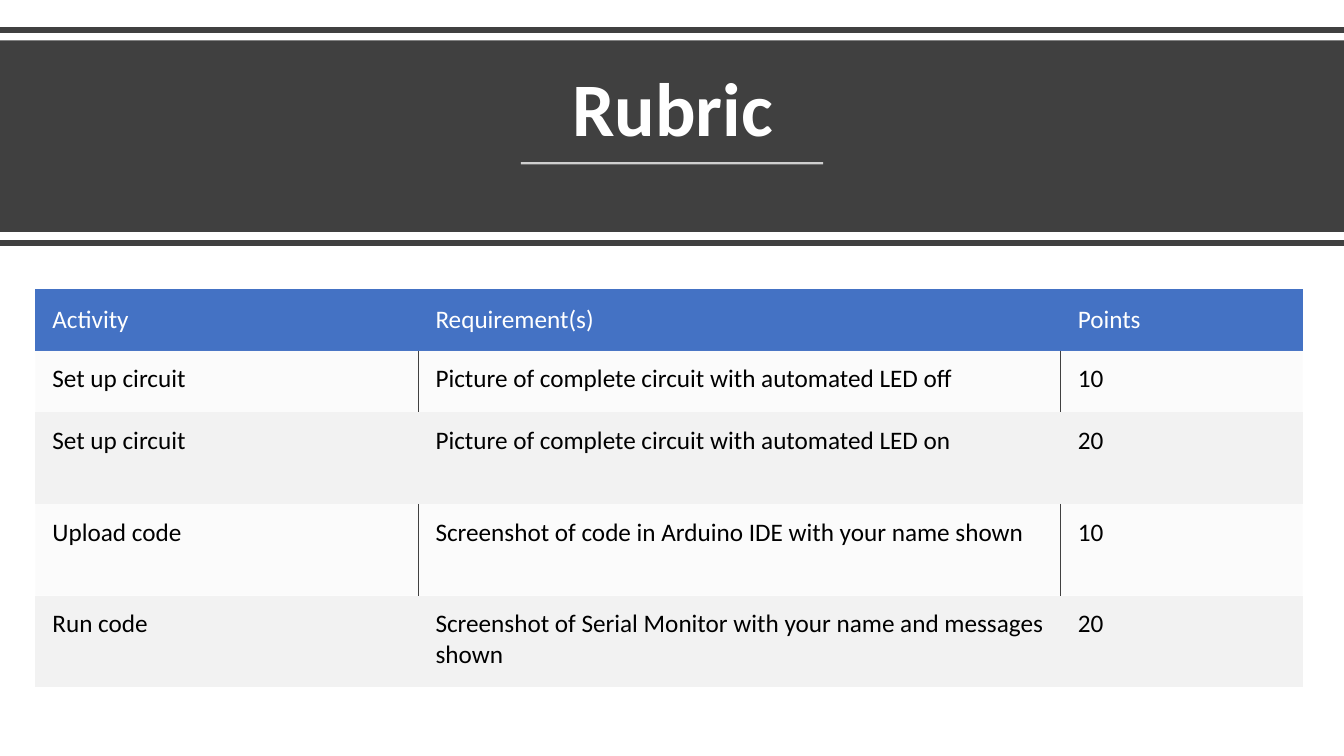
from dataclasses import dataclass

from lxml import etree
from pptx import Presentation
from pptx import util as u
from pptx.dml.color import RGBColor
from pptx.enum import shapes, text
from pptx.oxml.ns import qn

# Content
TITLE = "Rubric"
RUBRIC = [
    ("Activity", "Requirement(s)", "Points"),
    ("Set up circuit", "Picture of complete circuit with automated LED off", "10"),
    ("Set up circuit", "Picture of complete circuit with automated LED on", "20"),
    ("Upload code", "Screenshot of code in Arduino IDE with your name shown", "10"),
    ("Run code", "Screenshot of Serial Monitor with your name and messages shown", "20"),
]


@dataclass(frozen=True)
class Theme:
    font: str = "Calibri"
    dark: str = "404040"
    accent: str = "4472C4"
    band: str = "F2F2F2"
    white: str = "FFFFFF"
    black: str = "000000"
    title_size: float = 54
    body_size: float = 18
    rule: float = 4
    underline: float = 1.5
    divider: float = 0.5


THEME = Theme()

# Layout in inches
WIDTH, HEIGHT = 13.33, 7.5
BANNER_TOP, BANNER_HEIGHT = 0.4, 1.9
RULES = (0.3, 2.41)
UNDERLINE_WIDTH, UNDERLINE_Y = 3, 1.62
TITLE_BOX = (0.58, 0.54, 12.18, 1.02)
TABLE_LEFT, TABLE_TOP = 0.35, 2.87
COLUMNS = (3.8, 6.37, 2.4)
ROWS = (0.61,) * 2 + (0.91,) * 3
CELL_INSETS = (0.17, 0.13, 0.13, 0.13)


def add_alpha(parent, percent):
    for color in parent.iter(qn("a:srgbClr")):
        etree.SubElement(color, qn("a:alpha"), val=str(percent * 1000))


def write(frame, words, size, color, bold=False, align=None, spacing=None):
    para = frame.paragraphs[0]
    para.alignment = align
    para.line_spacing = spacing
    span = para.add_run()
    span.text = words
    span.font.name = THEME.font
    span.font.size = u.Pt(size)
    span.font.bold = bold
    span.font.color.rgb = RGBColor.from_string(color)


def add_rule(page, left, right, y, color, weight, alpha=None):
    rule = page.shapes.add_connector(
        shapes.MSO_CONNECTOR.STRAIGHT, *map(u.Inches, (left, y, right, y)))
    rule.line.color.rgb = RGBColor.from_string(color)
    rule.line.width = u.Pt(weight)
    properties = rule.line._get_or_add_ln().getparent()
    if alpha:
        add_alpha(properties, alpha)
    etree.SubElement(properties, qn("a:effectLst"))


def set_borders(cell, visible):
    properties = cell._tc.get_or_add_tcPr()
    for index, side in enumerate("LRTB"):
        border = etree.Element(qn("a:ln" + side), w=str(u.Pt(THEME.divider)))
        if side in visible:
            fill = etree.SubElement(border, qn("a:solidFill"))
            etree.SubElement(fill, qn("a:srgbClr"), val=THEME.dark)
        else:
            etree.SubElement(border, qn("a:noFill"))
        properties.insert(index, border)


def format_cell(cell, words, row, column):
    header, light = row == 0, row % 2 == 1
    (cell.margin_left, cell.margin_top,
     cell.margin_right, cell.margin_bottom) = map(u.Inches, CELL_INSETS)
    cell.vertical_anchor = text.MSO_ANCHOR.MIDDLE if header else text.MSO_ANCHOR.TOP
    cell.fill.solid()
    cell.fill.fore_color.rgb = RGBColor.from_string(THEME.accent if header else THEME.band)
    if light:
        add_alpha(cell._tc.tcPr, 30)
    # Light rows carry dividers between columns
    sides = ("L" if column else "") + ("R" if column < len(COLUMNS) - 1 else "")
    set_borders(cell, sides if light else "")
    write(cell.text_frame, words, THEME.body_size, THEME.white if header else THEME.black)


def add_banner(page):
    banner = page.shapes.add_shape(
        shapes.MSO_SHAPE.RECTANGLE, *map(u.Inches, (0, BANNER_TOP, WIDTH, BANNER_HEIGHT)))
    banner.shadow.inherit = False
    banner.fill.solid()
    banner.fill.fore_color.rgb = RGBColor.from_string(THEME.dark)
    banner.line.fill.background()
    for y in RULES:
        add_rule(page, 0, WIDTH, y, THEME.dark, THEME.rule)

    box = page.shapes.add_textbox(*map(u.Inches, TITLE_BOX))
    box.text_frame.word_wrap = True
    box.text_frame.vertical_anchor = text.MSO_ANCHOR.BOTTOM
    write(box.text_frame, TITLE, THEME.title_size, THEME.white, bold=True,
          align=text.PP_ALIGN.CENTER, spacing=0.9)
    left = (WIDTH - UNDERLINE_WIDTH) / 2
    add_rule(page, left, left + UNDERLINE_WIDTH, UNDERLINE_Y,
             THEME.white, THEME.underline, alpha=75)


def add_rubric(page):
    table = page.shapes.add_table(
        len(ROWS), len(COLUMNS),
        *map(u.Inches, (TABLE_LEFT, TABLE_TOP, sum(COLUMNS), sum(ROWS)))).table
    table.horz_banding = False
    for column, width in zip(table.columns, COLUMNS):
        column.width = u.Inches(width)
    for row, height in zip(table.rows, ROWS):
        row.height = u.Inches(height)
    for r, entries in enumerate(RUBRIC):
        for c, words in enumerate(entries):
            format_cell(table.cell(r, c), words, r, c)


def main():
    deck = Presentation()
    deck.slide_width, deck.slide_height = u.Inches(WIDTH), u.Inches(HEIGHT)
    page = deck.slides.add_slide(deck.slide_layouts[6])
    add_banner(page)
    add_rubric(page)
    deck.save("out.pptx")


if __name__ == "__main__":
    main()
